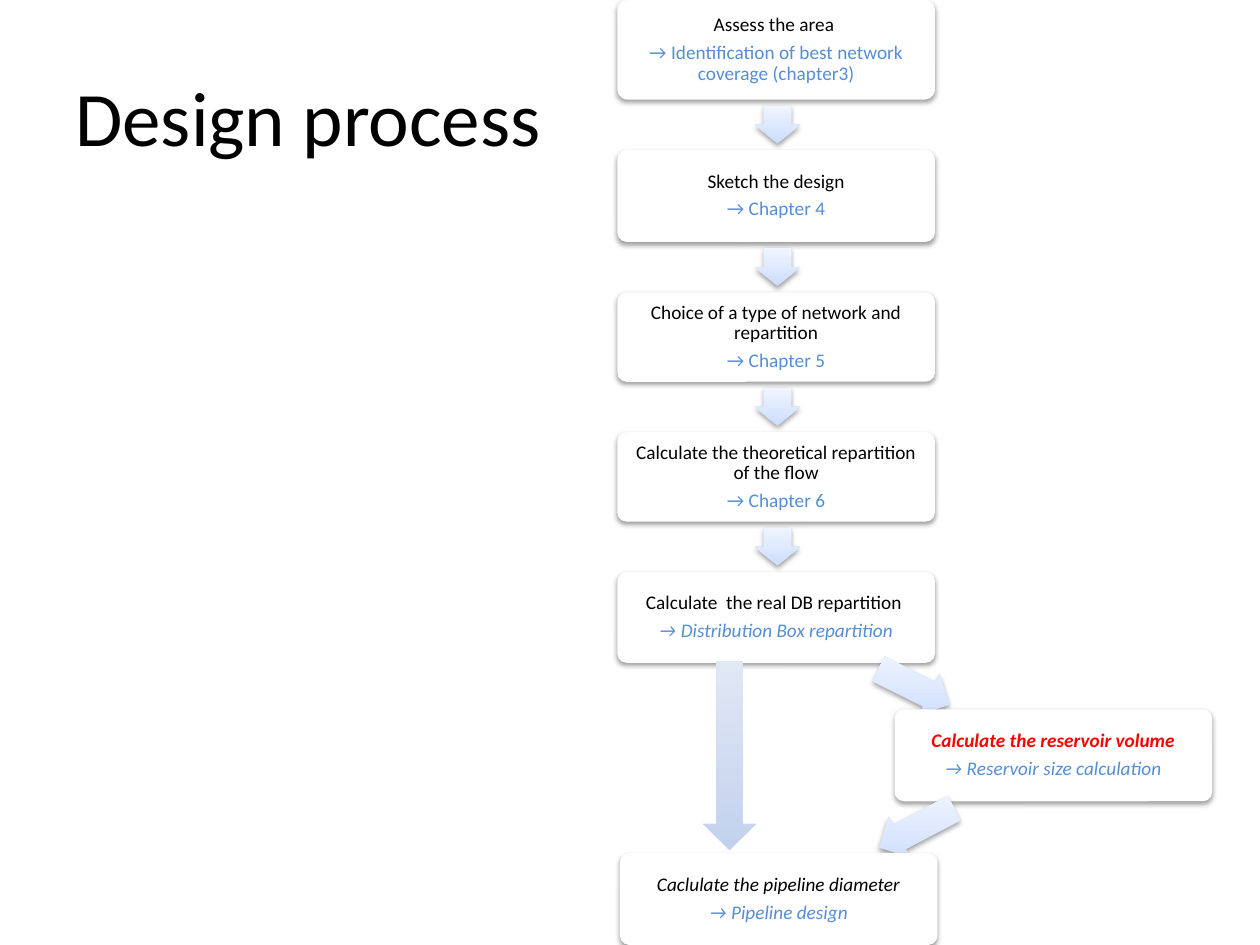
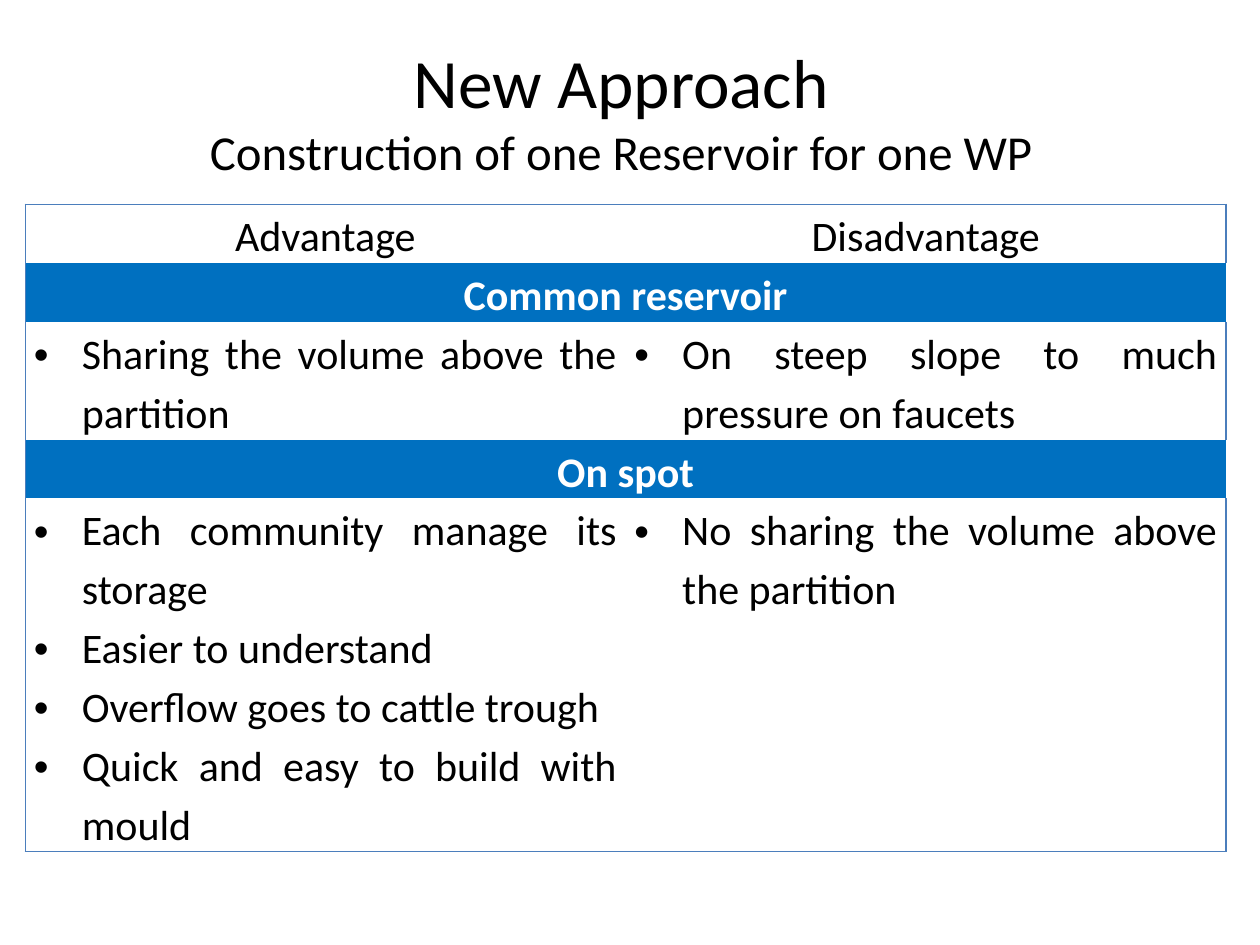
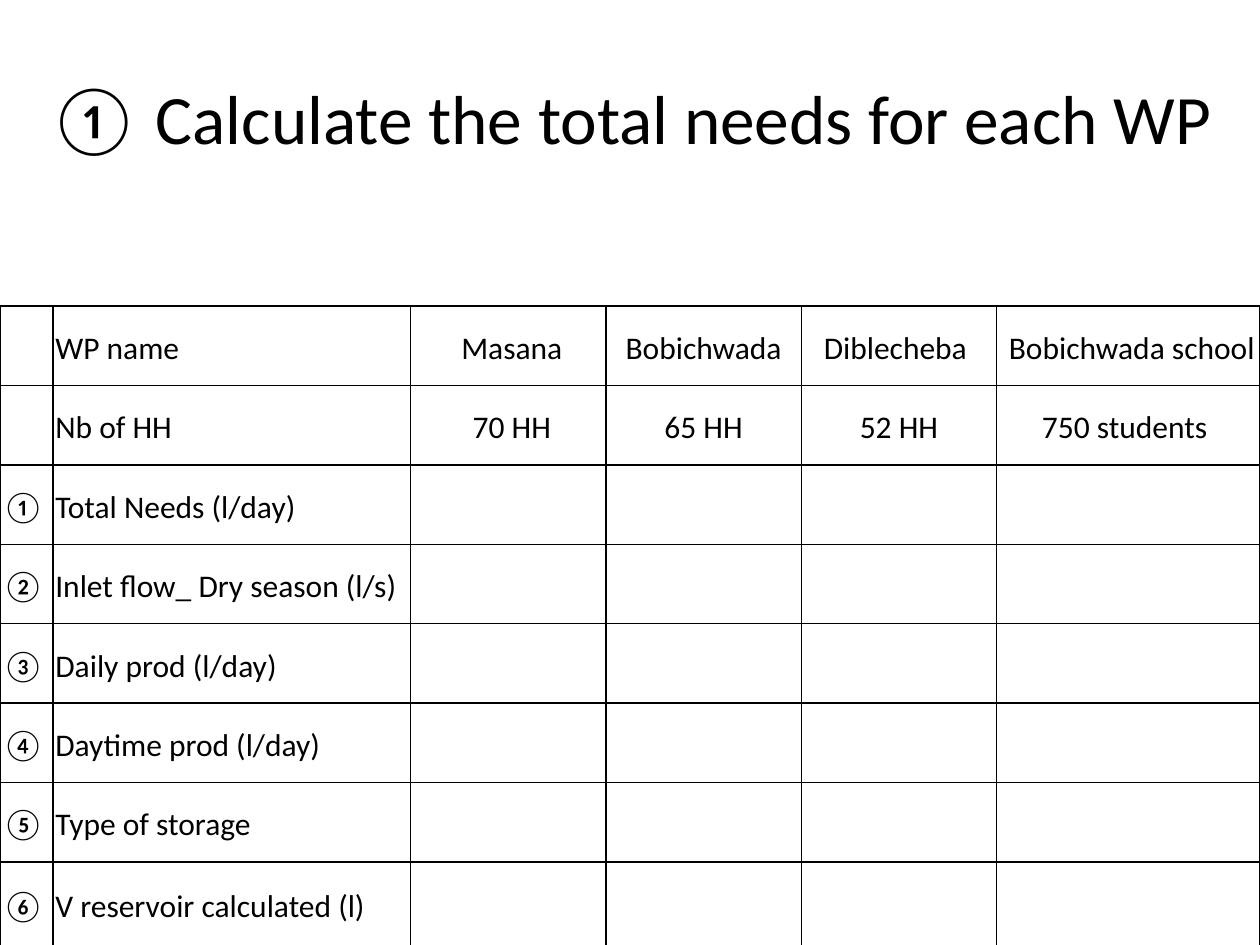
import pptx
import pptx.dml.color
import pptx.enum.shapes
import pptx.enum.text
import pptx.oxml
import pptx.oxml.ns
import pptx.util
from lxml import etree

Inches = pptx.util.Inches
Pt = pptx.util.Pt
RGB = pptx.dml.color.RGBColor
SHAPE = pptx.enum.shapes.MSO_SHAPE
ALIGN = pptx.enum.text.PP_ALIGN
MID = pptx.enum.text.MSO_ANCHOR.MIDDLE
TOP = pptx.enum.text.MSO_ANCHOR.TOP
qn = pptx.oxml.ns.qn

FONT = "Calibri"
BLACK = RGB(0x00, 0x00, 0x00)
WHITE = RGB(0xFF, 0xFF, 0xFF)
RED = RGB(0xFF, 0x00, 0x00)
SKY = RGB(0x55, 0x8E, 0xD5)
BAND = RGB(0x00, 0x70, 0xC0)
EDGE = RGB(0x4B, 0x7E, 0xBC)
PALE = (RGB(0xCD, 0xDD, 0xFE), RGB(0xF0, 0xF5, 0xFF))
DEEP = (RGB(0xC2, 0xD1, 0xED), RGB(0xE1, 0xE8, 0xF5))

# Slide 1: task, reference, box height, formats of the two lines
PLAIN = {}
ITALIC = {"italic": True}
ALERT = {"italic": True, "bold": True, "color": RED}
CHAIN = [
    ("Assess the area ", "→ Identification of best network coverage (chapter3)", 0.79, PLAIN, PLAIN),
    ("Sketch the design", "→ Chapter 4", 0.73, PLAIN, PLAIN),
    ("Choice of a type of network and repartition", "→ Chapter 5", 0.71, PLAIN, PLAIN),
    ("Calculate the theoretical repartition of the flow", "→ Chapter 6", 0.71, PLAIN, PLAIN),
    ("Calculate  the real DB repartition ", "→ Distribution Box repartition", 0.72, PLAIN, ITALIC),
]
TANK = ("Calculate the reservoir volume", "→ Reservoir size calculation", 0.73, ALERT, ITALIC)
PIPE = ("Caclulate the pipeline diameter", "→ Pipeline design", 0.73, ITALIC, ITALIC)
CARD_X, CARD_W, STEP_GAP = 4.9, 2.52, 0.4

# Slide 2: a string is a band over both columns, a pair is a row of bullets
HEADS = ("Advantage", "Disadvantage")
REVIEW = [
    "Common reservoir",
    (["Sharing the volume above the partition"],
     ["On steep slope to much pressure on faucets"]),
    "On spot",
    (["Each community manage its storage", "Easier to understand",
      "Overflow goes to cattle trough", "Quick and easy to build with mould"],
     ["No sharing the volume above the partition"]),
]
LINES = (1, 1, 2, 1, 6)
REVIEW_W, REVIEW_H = 9.53, 5.14

# Slide 3
NEEDS = [
    ("", "WP name", " Masana", "Bobichwada", "Diblecheba ", " Bobichwada school"),
    ("", "Nb of HH", " 70 HH", "65 HH", "52 HH", "750 students "),
    ("①", "Total Needs (l/day)"),
    ("②", "Inlet flow_ Dry season (l/s)"),
    ("③", "Daily prod (l/day)"),
    ("④", "Daytime prod (l/day)"),
    ("⑤", "Type of storage"),
    ("⑥", "V reservoir calculated (l)"),
]
NEED_COLS = (0.42, 2.84, 1.55, 1.55, 1.55, 2.09)
NEED_ROWS = [0.63] * 7 + [0.67]


def put(item, vals):
    for name, val in vals.items():
        setattr(item, name, val)


def style(font, size, color=BLACK, bold=False, italic=False):
    put(font, {"name": FONT, "size": Pt(size), "bold": bold, "italic": italic})
    font.color.rgb = color


def fill_text(frame, lines, form):
    """Write one paragraph for each (text, font format) pair."""
    for i, (text, font) in enumerate(lines):
        para = frame.add_paragraph() if i else frame.paragraphs[0]
        put(para, form)
        run = para.add_run()
        run.text = text
        style(run.font, **font)


def add_title(slide, box, parts, align):
    """Write (text, size) parts, each on a line of one paragraph."""
    frame = slide.shapes.add_textbox(*map(Inches, box)).text_frame
    put(frame, {"word_wrap": True, "vertical_anchor": MID})
    para = frame.paragraphs[0]
    para.alignment = align
    for i, (text, size) in enumerate(parts):
        if i:
            para.add_line_break()
        run = para.add_run()
        run.text = text
        style(run.font, size)


def add_form(slide, kind, box, turn=0, adjust=(), shade=True):
    """Add a preset shape without outline, with the soft shadow if asked."""
    form = slide.shapes.add_shape(kind, *map(Inches, box))
    form.rotation = turn
    for i, val in enumerate(adjust):
        form.adjustments[i] = val
    form.line.fill.background()
    form.shadow.inherit = False
    if shade:
        list_ = form._element.spPr.find(qn("a:effectLst"))
        cast = etree.SubElement(list_, qn("a:outerShdw"), blurRad=str(Pt(3.1)),
                                dist=str(Pt(1.6)), dir="5400000", rotWithShape="0")
        tint = etree.SubElement(cast, qn("a:srgbClr"), val="000000")
        etree.SubElement(tint, qn("a:alpha"), val="38000")
    return form


def add_arrow(slide, kind, box, tones, **more):
    form = add_form(slide, kind, box, **more)
    form.fill.gradient()
    form.fill.gradient_angle = 90
    for stop, tone in zip(form.fill.gradient_stops, tones):
        stop.color.rgb = tone
    form._element.spPr.find(qn("a:gradFill")).set("rotWithShape", "0")


def add_link(slide, box, turn):
    add_arrow(slide, SHAPE.RIGHT_ARROW, box, PALE, turn=turn, adjust=(0.6, 0.5))


def add_card(slide, left, top, step):
    task, ref, high, task_font, ref_font = step
    card = add_form(slide, SHAPE.ROUNDED_RECTANGLE, (left, top, CARD_W, high), adjust=(0.1,))
    card.fill.solid()
    card.fill.fore_color.rgb = WHITE
    frame = card.text_frame
    put(frame, {"word_wrap": True, "vertical_anchor": MID})
    put(frame, {f"margin_{side}": Inches(0.05) for side in ("left", "top", "right", "bottom")})
    fill_text(frame, [(task, {"size": 11, **task_font}), (ref, {"size": 11, "color": SKY, **ref_font})],
              {"alignment": ALIGN.CENTER, "line_spacing": 0.9, "space_after": Pt(3.85)})


def add_grid(slide, left, top, cols, rows):
    grid = slide.shapes.add_table(len(rows), len(cols), Inches(left), Inches(top),
                                  Inches(sum(cols)), Inches(sum(rows))).table
    put(grid, {"first_row": False, "horz_banding": False})
    for col, wide in zip(grid.columns, cols):
        col.width = Inches(wide)
    for row, high in zip(grid.rows, rows):
        row.height = Inches(high)
    return grid


def set_cell(cell, side, anchor, fill, edges, color, width):
    """Set margins, fill and the borders named in edges, such as "LT"."""
    put(cell, {"margin_left": Inches(side), "margin_right": Inches(side),
               "margin_top": 0, "margin_bottom": 0, "vertical_anchor": anchor})
    props = cell._tc.get_or_add_tcPr()
    for edge in "LRTB":
        line = etree.SubElement(props, qn(f"a:ln{edge}"), w=str(Pt(width)))
        if edge in edges:
            paint = etree.SubElement(line, qn("a:solidFill"))
            etree.SubElement(paint, qn("a:srgbClr"), val=str(color))
        else:
            etree.SubElement(line, qn("a:noFill"))
    if fill is None:
        cell.fill.background()
    else:
        cell.fill.solid()
        cell.fill.fore_color.rgb = fill


def add_bullets(frame):
    for para in frame.paragraphs:
        props = para._p.get_or_add_pPr()
        props.set("marL", str(Inches(0.38)))
        props.set("indent", str(Inches(-0.38)))
        etree.SubElement(props, qn("a:buFont"), typeface="Arial")
        etree.SubElement(props, qn("a:buChar"), char="•")


def draw_process(slide):
    add_title(slide, (0.5, 0.29, 9, 1.25), [("Design process", 44)], ALIGN.LEFT)
    top = 0
    for i, step in enumerate(CHAIN):
        add_card(slide, CARD_X, top, step)
        end = top + step[2]
        if i < len(CHAIN) - 1:
            add_link(slide, (6.02, end + 0.02, 0.3, 0.36), 90)
        top = end + STEP_GAP
    add_link(slide, (6.94, 5.27, 0.63, 0.36), 26.6)
    add_card(slide, 7.1, 5.63, TANK)
    add_link(slide, (6.94, 6.39, 0.67, 0.36), 152.3)
    add_card(slide, 4.92, 6.77, PIPE)
    add_arrow(slide, SHAPE.DOWN_ARROW, (5.58, 5.25, 0.42, 1.5), DEEP, shade=False)


def draw_review(slide):
    rows = [REVIEW_H * count / sum(LINES) for count in LINES]
    grid = add_grid(slide, 0.2, 1.62, [REVIEW_W / 2] * 2, rows)
    last = len(rows) - 1
    for r, row in enumerate([HEADS] + REVIEW):
        band = isinstance(row, str)
        if band:
            grid.cell(r, 0).merge(grid.cell(r, 1))
        for c in range(2):
            cell = grid.cell(r, c)
            edges = "LR"[c] + ("T" if r == 0 else "") + ("B" if r == last else "")
            set_cell(cell, 0.07, TOP, BAND if band else WHITE, edges, EDGE, 0.75)
            if band and c:
                continue
            text = row if band else row[c]
            listed = isinstance(text, list)
            font = {"size": 24, "color": WHITE if band else BLACK, "bold": band}
            fill_text(cell.text_frame, [(line, font) for line in (text if listed else [text])],
                      {"alignment": ALIGN.JUSTIFY if listed else ALIGN.CENTER, "line_spacing": 1.15})
            if listed:
                add_bullets(cell.text_frame)
    add_title(slide, (0.43, 0.36, 9, 1.02),
              [("New Approach", 39.6), ("Construction of one Reservoir for one WP", 27.9)], ALIGN.CENTER)


def draw_needs(slide):
    add_title(slide, (0, 0.3, 10, 1.25), [("① Calculate the total needs for each WP", 39.6)], ALIGN.CENTER)
    grid = add_grid(slide, 0, 2.43, NEED_COLS, NEED_ROWS)
    for r, row in enumerate(NEEDS):
        for c in range(len(NEED_COLS)):
            cell = grid.cell(r, c)
            set_cell(cell, 0.02, MID, None, "LRTB", BLACK, 1)
            if c < len(row) and row[c]:
                fill_text(cell.text_frame, [(row[c], {"size": 18})],
                          {"alignment": ALIGN.CENTER if c > 1 else ALIGN.LEFT,
                           "line_spacing": 1.15, "space_after": Pt(6)})


def main():
    deck = pptx.Presentation()
    put(deck, {"slide_width": Inches(10), "slide_height": Inches(7.5)})
    for draw in (draw_process, draw_review, draw_needs):
        draw(deck.slides.add_slide(deck.slide_layouts[6]))
    deck.save("out.pptx")


if __name__ == "__main__":
    main()
